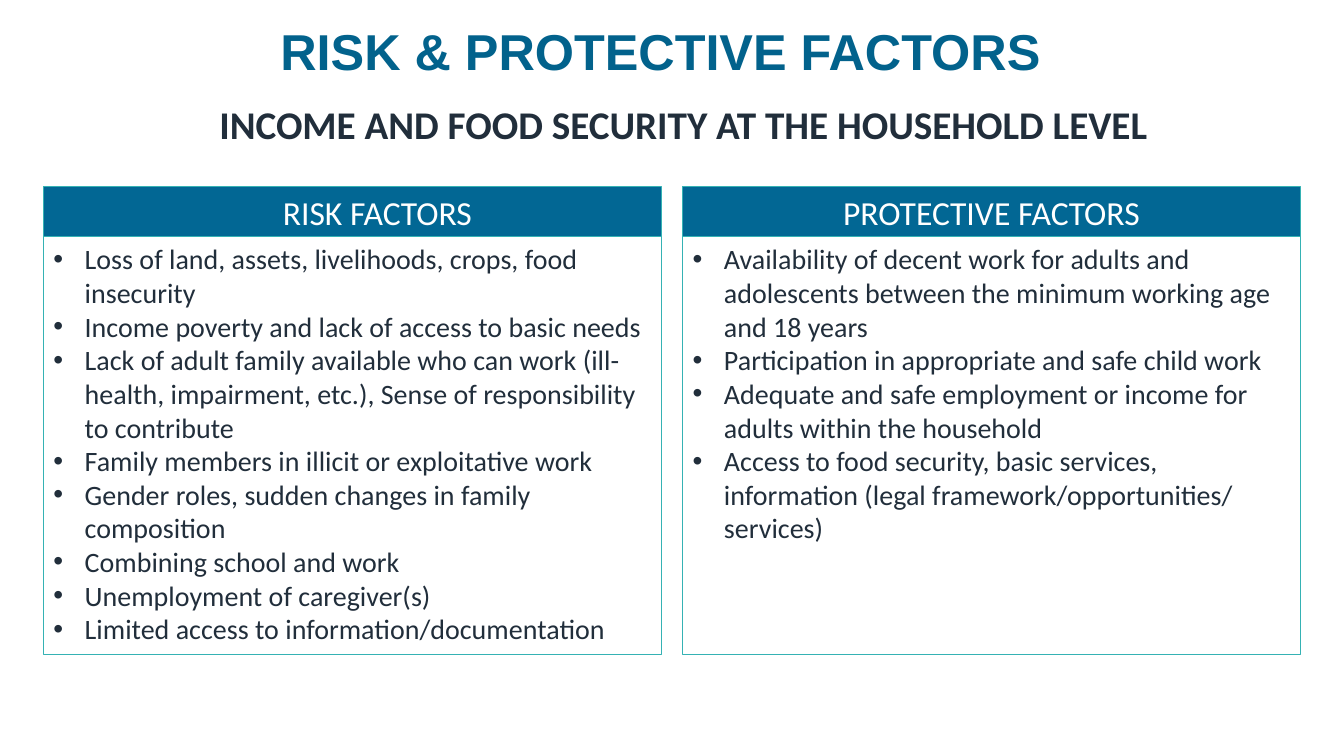
from lxml import etree
from pptx import Presentation
from pptx.dml.color import RGBColor
from pptx.enum.text import MSO_ANCHOR, MSO_AUTO_SIZE, PP_ALIGN
from pptx.oxml.ns import qn
from pptx.util import Cm, Pt

TITLE = "RISK & PROTECTIVE FACTORS"
SUBTITLE = "INCOME AND FOOD SECURITY AT THE HOUSEHOLD LEVEL"
COLUMNS = [
    {
        "heading": "RISK FACTORS",
        "heading_indent": Cm(1.27),
        "factors": [
            "Loss of land, assets, livelihoods, crops, food insecurity",
            "Income poverty and lack of access to basic needs",
            "Lack of adult family available who can work (ill-health, impairment, etc.), "
            "Sense of responsibility to contribute",
            "Family members in illicit or exploitative work",
            "Gender roles, sudden changes in family composition",
            "Combining school and work",
            "Unemployment of caregiver(s)",
            "Limited access to information/documentation",
        ],
    },
    {
        "heading": "PROTECTIVE FACTORS",
        "heading_indent": Cm(0),
        "factors": [
            "Availability of decent work for adults and adolescents between "
            "the minimum working age and 18 years",
            "Participation in appropriate and safe child work",
            "Adequate and safe employment or income for adults within the household",
            "Access to food security, basic services, information "
            "(legal framework/opportunities/ services)",
        ],
    },
]

TITLE_BLUE = RGBColor(0x02, 0x62, 0x8C)
HEADING_BLUE = RGBColor(0x02, 0x67, 0x94)
BORDER_TEAL = RGBColor(0x35, 0xB2, 0xB4)
INK = RGBColor(0x21, 0x2E, 0x3B)
WHITE = RGBColor(0xFF, 0xFF, 0xFF)
LEFT, CENTER = PP_ALIGN.LEFT, PP_ALIGN.CENTER
TOP, MIDDLE = MSO_ANCHOR.TOP, MSO_ANCHOR.MIDDLE
NO_AUTOFIT = MSO_AUTO_SIZE.NONE

COMPARISON_LAYOUT = 4
COLUMN_LEFT, COLUMN_TOP = Cm(1.09), Cm(4.7)
COLUMN_WIDTH, COLUMN_GAP = Cm(15.57), Cm(0.54)
HEADING_HEIGHT, LIST_HEIGHT = Cm(1.27), Cm(10.52)
BULLET_INDENT = Cm(0.79)


def place(shape, left, top, width, height):
    shape.left, shape.top, shape.width, shape.height = left, top, width, height


def prepare_frame(shape, anchor):
    frame = shape.text_frame
    frame.word_wrap = True
    frame.auto_size = NO_AUTOFIT
    frame.vertical_anchor = anchor
    return frame


def write(paragraph, text, font_name, size, color, bold=False, align=LEFT):
    paragraph.alignment = align
    paragraph.space_before = Pt(0)
    run = paragraph.add_run()
    run.text = text
    run.font.name = font_name
    run.font.size = Pt(size)
    run.font.bold = bold
    run.font.color.rgb = color


def indent(paragraph, margin, first_line=0):
    properties = paragraph._p.get_or_add_pPr()
    properties.set("marL", str(int(margin)))
    properties.set("indent", str(int(first_line)))
    return properties


def add_bullet(paragraph):
    properties = indent(paragraph, BULLET_INDENT, -BULLET_INDENT)
    bullet_color = etree.SubElement(properties, qn("a:buClr"))
    etree.SubElement(bullet_color, qn("a:srgbClr"), val=str(INK))
    etree.SubElement(properties, qn("a:buFont"), typeface="Arial")
    etree.SubElement(properties, qn("a:buChar"), char="•")


def outline(shape):
    shape.line.color.rgb = BORDER_TEAL
    shape.line.width = Pt(0.75)


def fill_column(heading, factor_list, column, left):
    place(factor_list, left, COLUMN_TOP + HEADING_HEIGHT, COLUMN_WIDTH, LIST_HEIGHT)
    outline(factor_list)
    frame = prepare_frame(factor_list, TOP)
    for number, factor in enumerate(column["factors"]):
        paragraph = frame.add_paragraph() if number else frame.paragraphs[0]
        write(paragraph, factor, "Calibri", 20, INK)
        add_bullet(paragraph)

    place(heading, left, COLUMN_TOP, COLUMN_WIDTH, HEADING_HEIGHT)
    outline(heading)
    heading.fill.solid()
    heading.fill.fore_color.rgb = HEADING_BLUE
    paragraph = prepare_frame(heading, TOP).paragraphs[0]
    write(paragraph, column["heading"], "Calibri", 24, WHITE, align=CENTER)
    indent(paragraph, column["heading_indent"])


def main():
    presentation = Presentation()
    presentation.slide_width, presentation.slide_height = Cm(33.87), Cm(19.05)
    slide = presentation.slides.add_slide(presentation.slide_layouts[COMPARISON_LAYOUT])

    title = slide.shapes.title
    place(title, Cm(5.69), Cm(-0.48), Cm(21.92), Cm(3.68))
    title_paragraph = prepare_frame(title, MIDDLE).paragraphs[0]
    write(title_paragraph, TITLE, "Arial", 36, TITLE_BLUE, bold=True, align=CENTER)
    title_paragraph.line_spacing = 0.9

    subtitle = slide.shapes.add_textbox(Cm(4.01), Cm(2.41), Cm(25.3), Cm(1.45))
    subtitle_paragraph = prepare_frame(subtitle, TOP).paragraphs[0]
    write(subtitle_paragraph, SUBTITLE, "Calibri", 28, INK, bold=True)
    indent(subtitle_paragraph, Cm(1.27))

    for number, column in enumerate(COLUMNS):
        heading = slide.placeholders[1 + 2 * number]
        factor_list = slide.placeholders[2 + 2 * number]
        left = COLUMN_LEFT + number * (COLUMN_WIDTH + COLUMN_GAP)
        fill_column(heading, factor_list, column, left)

    presentation.save("out.pptx")


if __name__ == "__main__":
    main()
